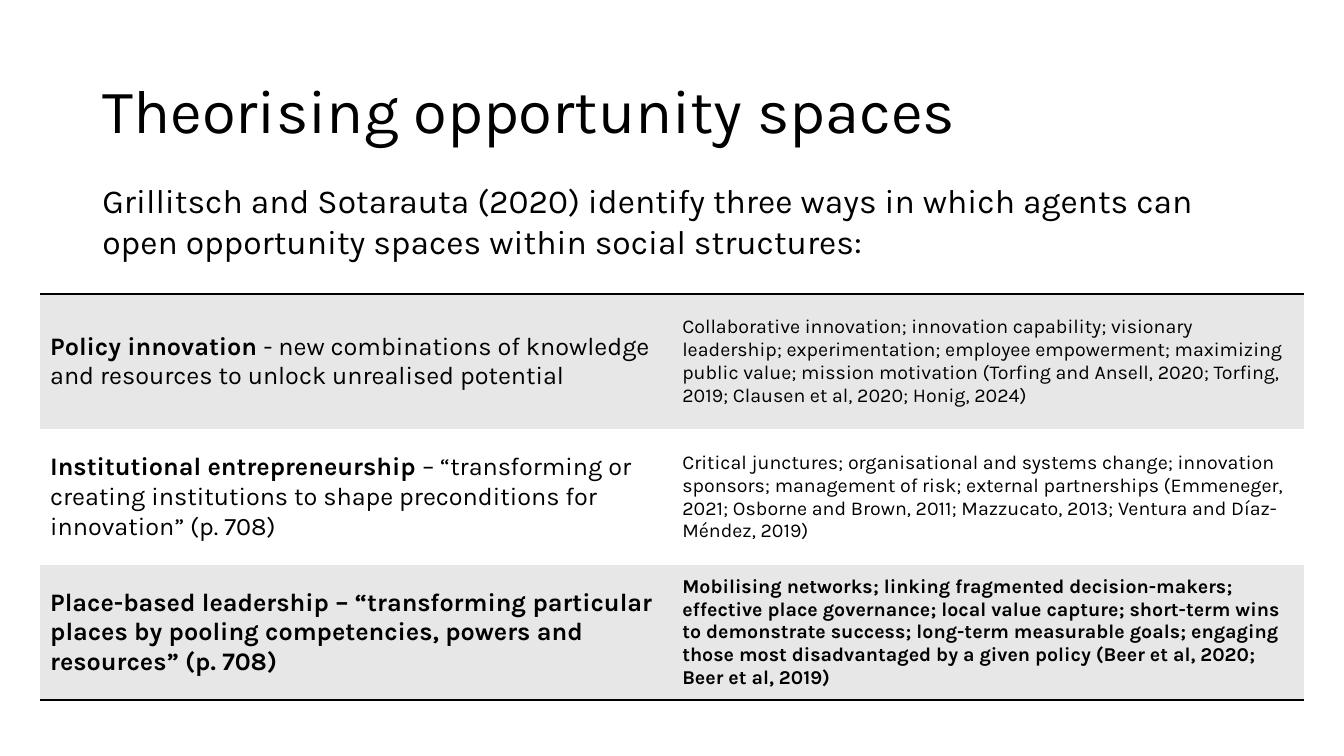
from lxml.etree import SubElement
from pptx import Presentation
from pptx.dml.color import RGBColor
from pptx.enum.text import MSO_ANCHOR as Anchor, MSO_AUTO_SIZE as AutoSize, PP_ALIGN as Align
from pptx.oxml.ns import qn
from pptx.util import Cm, Pt

FONT = "Karla"
COLORS = {"ink": "000000", "band": "E7E7E7", "paper": "FFFFFF"}
RULE_WIDTH = Pt(2)

TITLE = "Theorising opportunity spaces"
INTRO = ("Grillitsch and Sotarauta (2020) identify three ways in which agents can "
         "open opportunity spaces within social structures:")

# Each row: concept, its definition, related themes
CONCEPTS = [
    ("Policy innovation ",
     "- new combinations of knowledge and resources to unlock unrealised potential",
     "Collaborative innovation; innovation capability; visionary leadership; "
     "experimentation; employee empowerment; maximizing public value; mission motivation "
     "(Torfing and Ansell, 2020; Torfing, 2019; Clausen et al, 2020; Honig, 2024)"),
    ("Institutional entrepreneurship ",
     "– “transforming or creating institutions to shape preconditions for innovation” (p. 708)",
     "Critical junctures; organisational and systems change; innovation sponsors; "
     "management of risk; external partnerships (Emmeneger, 2021; Osborne and Brown, 2011; "
     "Mazzucato, 2013; Ventura and Díaz-Méndez, 2019)"),
    ("Place-based leadership ",
     "– “transforming particular places by pooling competencies, powers and resources” (p. 708)",
     "Mobilising networks; linking fragmented decision-makers; effective place governance; "
     "local value capture; short-term wins to demonstrate success; long-term measurable "
     "goals; engaging those most disadvantaged by a given policy "
     "(Beer et al, 2020; Beer et al, 2019)"),
]


def color(name):
    return RGBColor.from_string(COLORS[name])


def style(paragraph, size, bold=False):
    paragraph.alignment = Align.LEFT
    font = paragraph.font
    font.name, font.size, font.bold = FONT, Pt(size), bold
    font.color.rgb = color("ink")


def write_runs(paragraph, size, parts):
    """Write (text, bold) parts; bold goes on the paragraph where they agree."""
    weights = {bold for _, bold in parts}
    style(paragraph, size, weights == {True})
    for text, bold in parts:
        run = paragraph.add_run()
        run.text = text
        if len(weights) > 1:
            run.font.bold = bold


def set_borders(cell, ruled_sides):
    """Draw the ruled sides ("T", "B") and clear the others."""
    properties = cell._tc.get_or_add_tcPr()
    for side in "LRTB":
        line = SubElement(properties, qn(f"a:ln{side}"), w=str(RULE_WIDTH))
        if side in ruled_sides:
            ink = SubElement(line, qn("a:solidFill"))
            SubElement(ink, qn("a:srgbClr"), val=COLORS["ink"])
        else:
            SubElement(line, qn("a:noFill"))


def format_title(title):
    title.left, title.top, title.width, title.height = Cm(2.33), Cm(1.01), Cm(29.21), Cm(3.68)
    frame = title.text_frame
    frame.text = TITLE
    frame.auto_size = AutoSize.NONE
    frame.vertical_anchor = Anchor.MIDDLE
    style(frame.paragraphs[0], 44)
    frame.paragraphs[0].line_spacing = 0.9


def add_concept_table(slide):
    frame = slide.shapes.add_table(len(CONCEPTS), 2, Cm(1.01), Cm(7.41), Cm(31.86), Cm(10.23))
    table = frame.table
    table.first_row = table.horz_banding = False
    last = len(CONCEPTS) - 1
    for row, (concept, definition, themes) in enumerate(CONCEPTS):
        emphasised = row == last
        contents = [(18, [(concept, True), (definition, emphasised)]),
                    (14, [(themes, emphasised)])]
        for column, (size, parts) in enumerate(contents):
            cell = table.cell(row, column)
            cell.vertical_anchor = Anchor.MIDDLE
            write_runs(cell.text_frame.paragraphs[0], size, parts)
            # Borders come before the fill in the cell properties
            set_borders(cell, "T" * (row == 0) + "B" * (row == last))
            cell.fill.solid()
            cell.fill.fore_color.rgb = color("paper" if row % 2 else "band")


def add_intro(slide):
    intro = slide.shapes.add_textbox(Cm(2.33), Cm(4.42), Cm(29.21), Cm(2.31))
    frame = intro.text_frame
    frame.word_wrap = True
    frame.auto_size = AutoSize.SHAPE_TO_FIT_TEXT
    frame.text = INTRO
    style(frame.paragraphs[0], 24)


def main():
    deck = Presentation()
    deck.slide_width, deck.slide_height = Cm(33.87), Cm(19.05)
    slide = deck.slides.add_slide(deck.slide_layouts[5])  # title only

    # Heading, concept table, introduction
    format_title(slide.shapes.title)
    add_concept_table(slide)
    add_intro(slide)

    deck.save("out.pptx")


if __name__ == "__main__":
    main()
